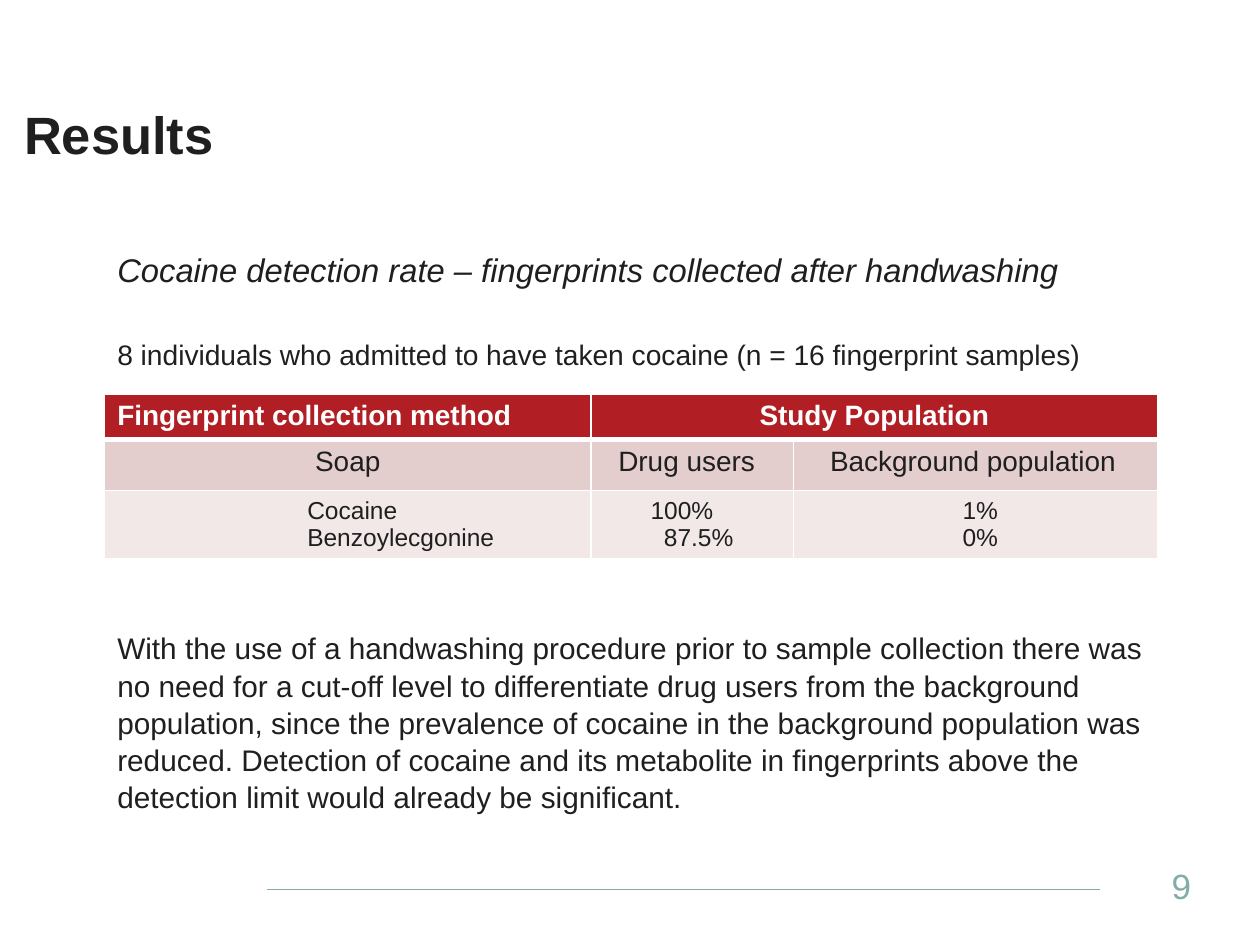
from dataclasses import dataclass

from lxml import etree
from pptx import Presentation
from pptx.dml.color import RGBColor
from pptx.enum import shapes, text
from pptx.oxml import ns
from pptx.util import Cm, Pt


@dataclass(frozen=True)
class Theme:
    font: str = "Arial"
    ink: str = "1F1F1F"
    white: str = "FFFFFF"
    accent: str = "81ADA8"
    header: str = "B11F24"
    band: str = "E4CDCD"
    pale: str = "F2E8E8"
    title: float = 30
    heading: float = 18.7
    sample: float = 16.1
    body: float = 17
    number: float = 20
    table: float = 16
    data: float = 14


@dataclass(frozen=True)
class Entry:
    lines: tuple[str, ...]
    indents: tuple[float, ...] = (0, 0)
    centred: bool = False
    span: int = 1


@dataclass(frozen=True)
class Row:
    height: float
    entries: tuple[Entry, ...]
    fill: str
    size: float
    color: str
    bold: bool = False
    middle: bool = False
    top_line: float = 1
    bottom_line: float = 1


THEME = Theme()
COLUMNS = (9.8, 4.09, 7.34)
ROWS = (
    Row(0.91, (Entry(("Fingerprint collection method",)),
               Entry(("Study Population",), centred=True, span=2)),
        THEME.header, THEME.table, THEME.white, bold=True, bottom_line=3),
    Row(1.03, (Entry(("Soap",), centred=True),
               Entry(("Drug users",), (0.3,)),
               Entry(("Background population",), (0.48,))),
        THEME.band, THEME.table, THEME.ink, top_line=3),
    Row(1.35, (Entry(("Cocaine", "Benzoylecgonine"), (3.83, 3.83)),
               Entry(("100%", "87.5%"), (0.95, 1.22)),
               Entry(("1%", "0%"), (3.15, 3.15))),
        THEME.pale, THEME.data, THEME.ink, middle=True),
)
HEADING = "Cocaine detection rate – fingerprints collected after handwashing"
SAMPLE = "8 individuals who admitted to have taken cocaine (n = 16 fingerprint samples)"
CONCLUSION = (
    "With the use of a handwashing procedure prior to sample collection there was "
    "no need for a cut-off level to differentiate drug users from the background "
    "population, since the prevalence of cocaine in the background population was "
    "reduced. Detection of cocaine and its metabolite in fingerprints above the "
    "detection limit would already be significant."
)


def write(paragraph, words: str, *, size: float, color: str = THEME.ink,
          bold: bool = False, italic: bool = False, centred: bool = False,
          indent: float = 0, before: float = 0, spacing: float = 1) -> None:
    properties = paragraph._p.get_or_add_pPr()
    properties.set("marL", str(Cm(indent)))
    properties.set("indent", "0")
    etree.SubElement(properties, ns.qn("a:buNone"))
    paragraph.alignment = text.PP_ALIGN.CENTER if centred else text.PP_ALIGN.LEFT
    paragraph.space_before = Pt(before)
    paragraph.line_spacing = spacing
    span = paragraph.add_run()
    span.text = words
    span.font.name = THEME.font
    span.font.size = Pt(size)
    span.font.bold = bold
    span.font.italic = italic
    span.font.color.rgb = RGBColor.from_string(color)


def place(box, left: float, top: float, width: float, height: float,
          anchor=text.MSO_ANCHOR.TOP):
    box.left, box.top, box.width, box.height = map(Cm, (left, top, width, height))
    frame = box.text_frame
    frame.word_wrap = True
    frame.auto_size = text.MSO_AUTO_SIZE.NONE
    frame.vertical_anchor = anchor
    return frame


def next_paragraph(frame, position: int):
    return frame.add_paragraph() if position else frame.paragraphs[0]


def set_borders(cell, row: Row) -> None:
    properties = cell._tc.get_or_add_tcPr()
    weights = {"lnL": 1, "lnR": 1, "lnT": row.top_line, "lnB": row.bottom_line}
    for position, (side, weight) in enumerate(weights.items()):
        line = etree.Element(ns.qn(f"a:{side}"), w=str(Pt(weight)))
        fill = etree.SubElement(line, ns.qn("a:solidFill"))
        etree.SubElement(fill, ns.qn("a:srgbClr"), val=THEME.white)
        properties.insert(position, line)


def fill_cell(cell, entry: Entry, row: Row) -> None:
    cell.vertical_anchor = text.MSO_ANCHOR.MIDDLE if row.middle else text.MSO_ANCHOR.TOP
    for position, (words, indent) in enumerate(zip(entry.lines, entry.indents)):
        write(next_paragraph(cell.text_frame, position), words, size=row.size,
              color=row.color, bold=row.bold, centred=entry.centred, indent=indent)


def add_results_table(page) -> None:
    frame = page.shapes.add_table(len(ROWS), len(COLUMNS), Cm(2.11), Cm(7.95),
                                  Cm(sum(COLUMNS)), Cm(sum(row.height for row in ROWS)))
    table = frame.table
    for column, width in zip(table.columns, COLUMNS):
        column.width = Cm(width)
    for r, row in enumerate(ROWS):
        table.rows[r].height = Cm(row.height)
        for c in range(len(COLUMNS)):
            cell = table.cell(r, c)
            cell.fill.solid()
            cell.fill.fore_color.rgb = RGBColor.from_string(row.fill)
            set_borders(cell, row)
        c = 0
        for entry in row.entries:
            cell = table.cell(r, c)
            if entry.span > 1:
                cell.merge(table.cell(r, c + entry.span - 1))
            fill_cell(cell, entry, row)
            c += entry.span


def add_footer(page) -> None:
    rule = page.shapes.add_connector(shapes.MSO_CONNECTOR.STRAIGHT,
                                     Cm(5.38), Cm(17.93), Cm(22.17), Cm(17.93))
    rule.line.color.rgb = RGBColor.from_string(THEME.accent)
    rule.line.width = Pt(0.5)
    etree.SubElement(rule._element.spPr, ns.qn("a:effectLst"))
    box = page.shapes.add_textbox(0, 0, 0, 0)
    frame = place(box, 23.37, 17.35, 2.03, 1.02, text.MSO_ANCHOR.MIDDLE)
    write(frame.paragraphs[0], "9", size=THEME.number, color=THEME.accent)


def main() -> None:
    deck = Presentation()
    deck.slide_width, deck.slide_height = Cm(25.4), Cm(19.05)
    page = deck.slides.add_slide(deck.slide_layouts[1])
    title = place(page.shapes.title, 0.23, 1.92, 20.14, 2.08)
    write(title.paragraphs[0], "Results", size=THEME.title, bold=True)
    body = place(page.placeholders[1], 2.11, 4.9, 21.64, 10.9)
    passages = (
        (HEADING, dict(size=THEME.heading, italic=True)),
        (SAMPLE, dict(size=THEME.sample, before=28)),
        (CONCLUSION, dict(size=THEME.body, before=147, spacing=1.04)),
    )
    for position, (words, style) in enumerate(passages):
        write(next_paragraph(body, position), words, **style)
    add_results_table(page)
    add_footer(page)
    deck.save("out.pptx")


if __name__ == "__main__":
    main()
